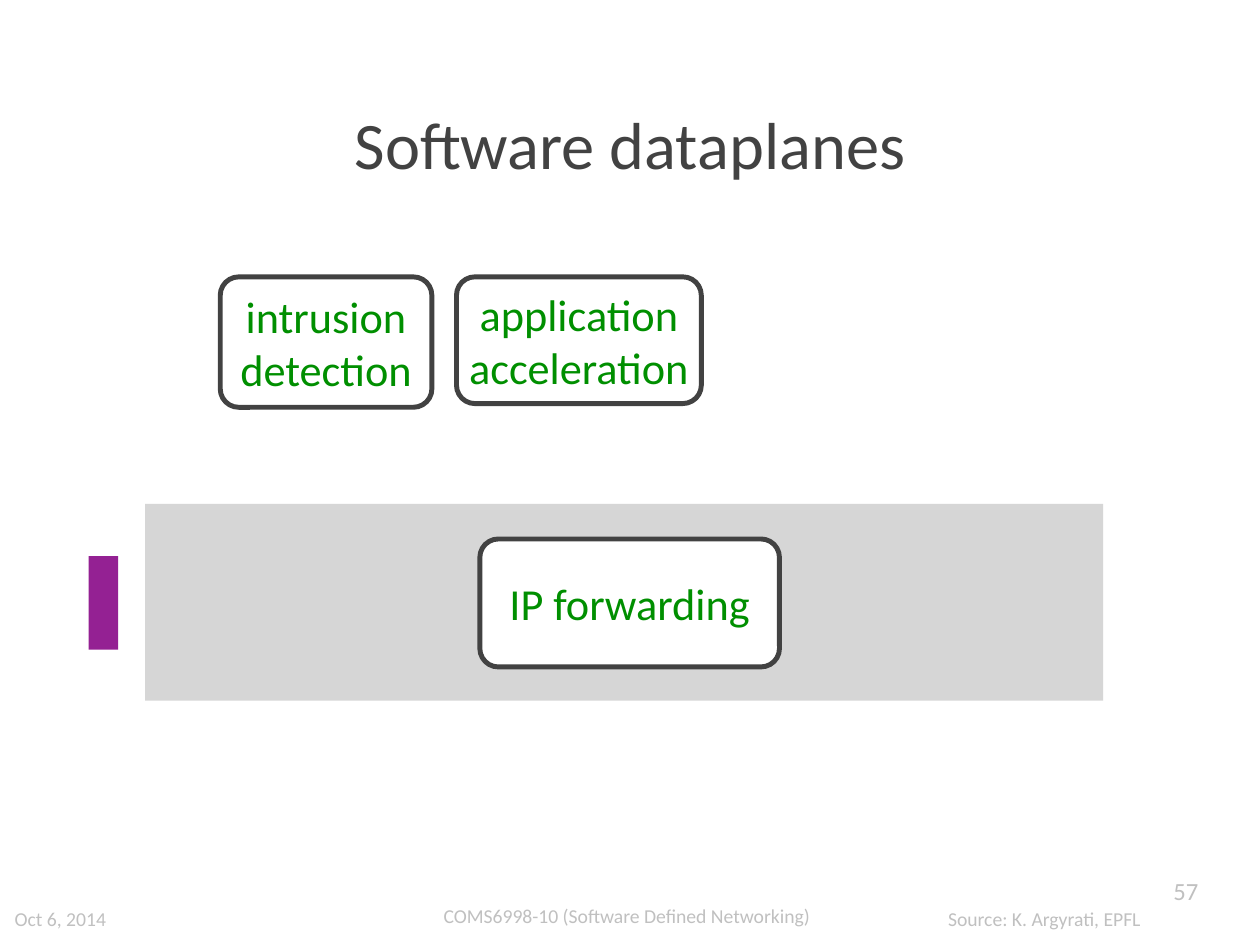
"""Build the slide on software dataplanes."""
from pptx import Presentation
from pptx.dml.color import RGBColor
from pptx.enum.shapes import MSO_SHAPE as Shape
from pptx.enum.text import MSO_ANCHOR as Anchor, PP_ALIGN as Align
from pptx.util import Pt


def color(hex_code):
    return RGBColor.from_string(hex_code)


def write(frame, text, size, hex_code, align, inset):
    frame.text = text
    frame.word_wrap = True
    frame.vertical_anchor = Anchor.MIDDLE
    frame.margin_left = frame.margin_right = Pt(inset)
    frame.margin_top = frame.margin_bottom = Pt(inset)
    paragraph = frame.paragraphs[0]
    paragraph.alignment = align
    paragraph.font.name = "Calibri"
    paragraph.font.size = Pt(size)
    paragraph.font.color.rgb = color(hex_code)


deck = Presentation()
deck.slide_width, deck.slide_height = Pt(1024), Pt(768)
slide = deck.slides.add_slide(deck.slide_layouts[5])

title = slide.shapes.title
title.left, title.top, title.width, title.height = Pt(51), Pt(35), Pt(922), Pt(162)
write(title.text_frame, "Software dataplanes", 54, "424242", Align.CENTER, 4)

footers = [
    ("COMS6998-10 (Software Defined Networking)", 356.5, 729, 330, 16, Align.LEFT, 4),
    ("Oct 6, 2014", 8, 731.5, 105, 16, Align.LEFT, 4),
    ("Source: K. Argyrati, EPFL", 766.5, 731.5, 188, 16, Align.LEFT, 4),
    ("57", 937, 709, 40, 20, Align.RIGHT, 3),
]
for text, left, top, width, size, align, inset in footers:
    footer = slide.shapes.add_textbox(Pt(left), Pt(top), Pt(width), Pt(30))
    write(footer.text_frame, text, size, "C0C0C0", align, inset)

blocks = [
    ("D6D6D6", 118, 409.5, 778.5, 160),
    ("942193", 72, 452, 24, 76),
]
for fill, left, top, width, height in blocks:
    block = slide.shapes.add_shape(Shape.RECTANGLE, Pt(left), Pt(top), Pt(width), Pt(height))
    block.shadow.inherit = False
    block.fill.solid()
    block.fill.fore_color.rgb = color(fill)
    block.line.fill.background()

functions = [
    ("intrusion detection", 179, 225, 172, 106),
    ("application acceleration", 371, 225, 199, 103),
    ("IP forwarding", 390, 438, 243.5, 104),
]
for text, left, top, width, height in functions:
    function = slide.shapes.add_shape(
        Shape.ROUNDED_RECTANGLE, Pt(left), Pt(top), Pt(width), Pt(height))
    function.adjustments[0] = 15 / height
    function.shadow.inherit = False
    function.fill.solid()
    function.fill.fore_color.rgb = color("FFFFFF")
    function.line.color.rgb = color("424242")
    function.line.width = Pt(4)
    write(function.text_frame, text, 36, "008F00", Align.CENTER, 0)

deck.save("out.pptx")
